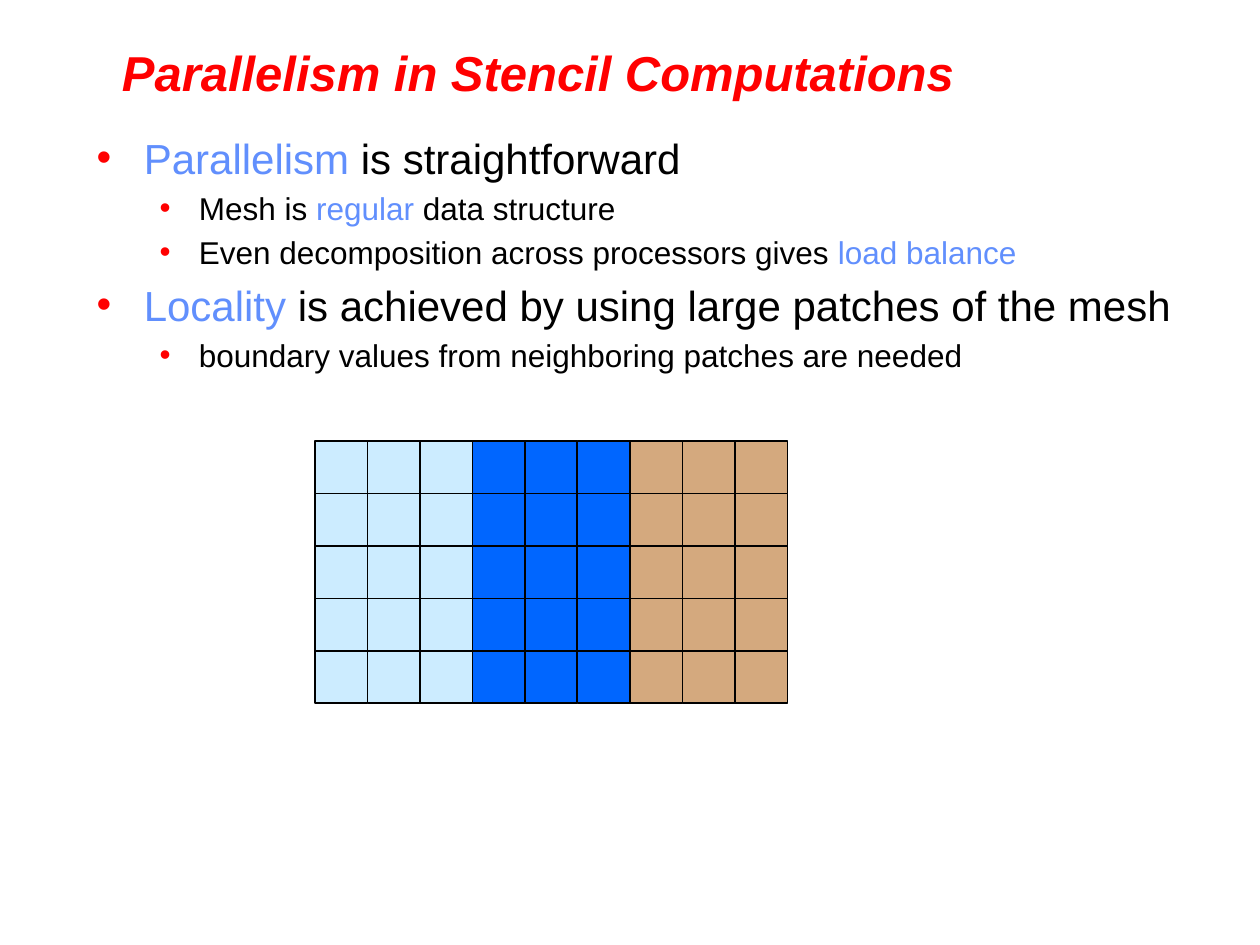
import pptx
import pptx.util
import pptx.dml.color
import pptx.enum.shapes
import pptx.enum.text
import pptx.oxml

Cm, Pt = pptx.util.Cm, pptx.util.Pt
RGB = pptx.dml.color.RGBColor
RED = RGB(0xFF, 0x00, 0x00)
BLACK = RGB(0x00, 0x00, 0x00)
ACCENT = RGB(0x61, 0x8F, 0xFD)
PALE = RGB(0xCC, 0xEC, 0xFF)
BLUE = RGB(0x00, 0x66, 0xFF)
TAN = RGB(0xD4, 0xA9, 0x7E)
NS = 'xmlns:a="http://schemas.openxmlformats.org/drawingml/2006/main"'

# Content: paragraphs are (level, [(text, colour), ...])
TITLE = [(None, [("Parallelism in Stencil Computations", RED)])]
POINTS = [
    (0, [("Parallelism", ACCENT), (" is straightforward", BLACK)]),
    (1, [("Mesh is ", BLACK), ("regular", ACCENT), (" data structure", BLACK)]),
    (1, [("Even decomposition across processors gives ", BLACK),
         ("load balance", ACCENT)]),
    (0, [("Locality", ACCENT),
         (" is achieved by using large patches of the mesh", BLACK)]),
    (1, [("boundary values from neighboring patches are needed", BLACK)]),
]
LEVELS = [(24, 0.95, 0.95), (18, 2.06, 0.79)]  # size, margin, hang in cm
PATCHES = [PALE, BLUE, TAN]
ROWS, SPAN = 5, 3  # mesh rows, columns in each patch
CELL = 2.54 * 5 / 12
LEFT, TOP = 6.35, 8.89


def add_bullet(para, level):
    """Set the level, hanging indent, spacing and red bullet."""
    size, margin, hang = LEVELS[level]
    para.level = level
    props = para._p.get_or_add_pPr()
    props.set("marL", str(int(Cm(margin))))
    props.set("indent", str(-int(Cm(hang))))
    for part in (
        '<a:spcBef {}><a:spcPct val="20000"/></a:spcBef>',
        '<a:buClr {}><a:srgbClr val="' + str(RED) + '"/></a:buClr>',
        '<a:buFont {} typeface="Arial"/>',
        '<a:buChar {} char="•"/>',
    ):
        props.append(pptx.oxml.parse_xml(part.format(NS)))
    return size


def add_text(slide, paras, box, size=28, bold=False, italic=False,
             anchor=pptx.enum.text.MSO_ANCHOR.TOP):
    frame = slide.shapes.add_textbox(*map(Cm, box)).text_frame
    frame.word_wrap = True
    frame.vertical_anchor = anchor
    for i, (level, runs) in enumerate(paras):
        para = frame.add_paragraph() if i else frame.paragraphs[0]
        points = size if level is None else add_bullet(para, level)
        for text, color in runs:
            run = para.add_run()
            run.text = text
            font = run.font
            font.name, font.size = "Arial", Pt(points)
            font.bold, font.italic = bold, italic
            font.color.rgb = color


def add_cell(slide, row, col):
    cell = slide.shapes.add_shape(
        pptx.enum.shapes.MSO_SHAPE.RECTANGLE,
        Cm(LEFT + col * CELL), Cm(TOP + row * CELL), Cm(CELL), Cm(CELL))
    cell.shadow.inherit = False
    cell.fill.solid()
    cell.fill.fore_color.rgb = PATCHES[col // SPAN]
    cell.line.color.rgb = BLACK
    cell.line.width = Pt(1)


def main():
    deck = pptx.Presentation()
    deck.slide_width, deck.slide_height = Cm(25.4), Cm(19.05)
    slide = deck.slides.add_slide(deck.slide_layouts[6])

    # Title and bullet points
    add_text(slide, TITLE, (2.21, 0.86, 21.49, 1.17), bold=True, italic=True,
             anchor=pptx.enum.text.MSO_ANCHOR.MIDDLE)
    add_text(slide, POINTS, (1.7, 2.54, 22.23, 13.44))

    # Mesh, split into patches by column
    for row in range(ROWS):
        for col in range(SPAN * len(PATCHES)):
            add_cell(slide, row, col)

    deck.save("out.pptx")


if __name__ == "__main__":
    main()
